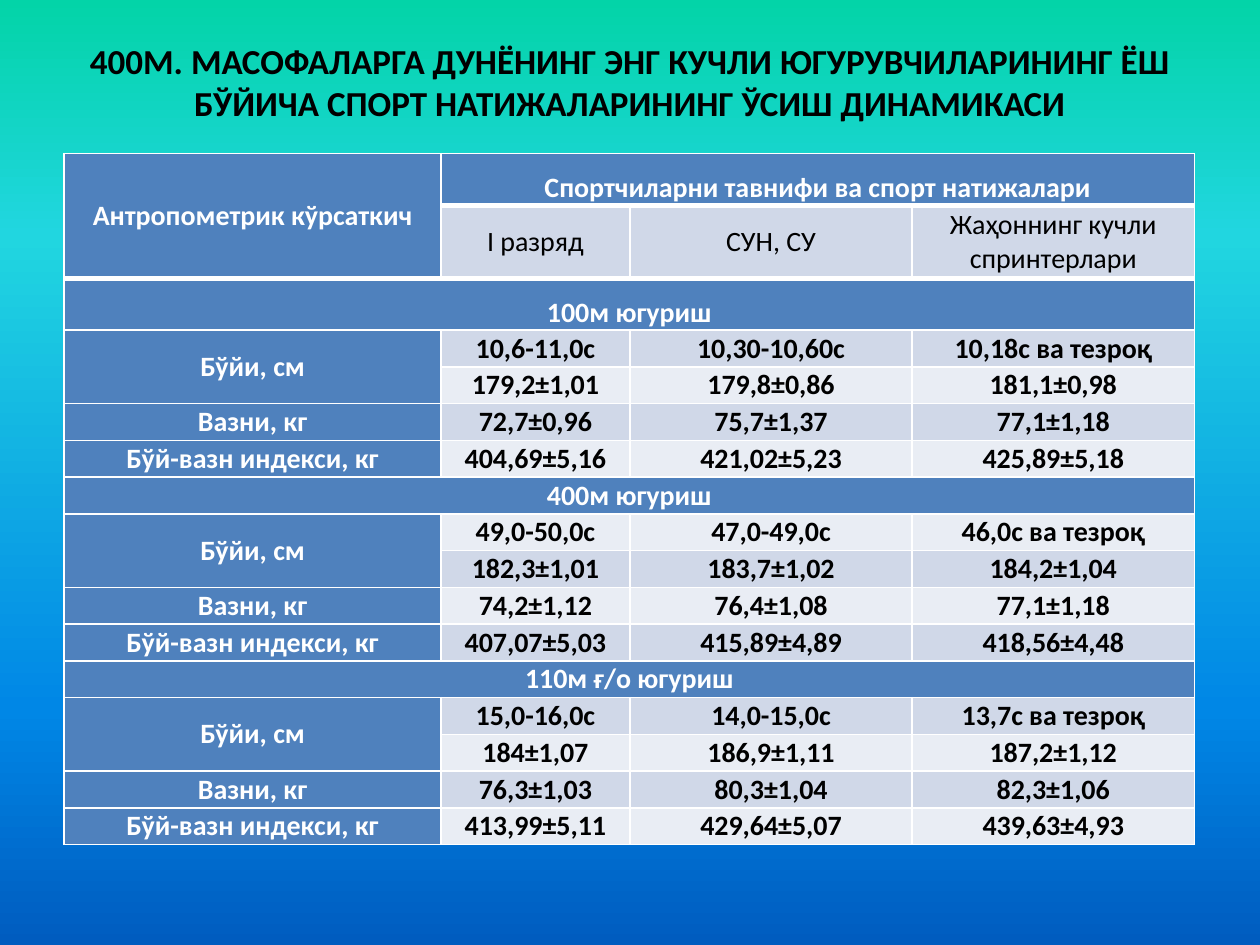
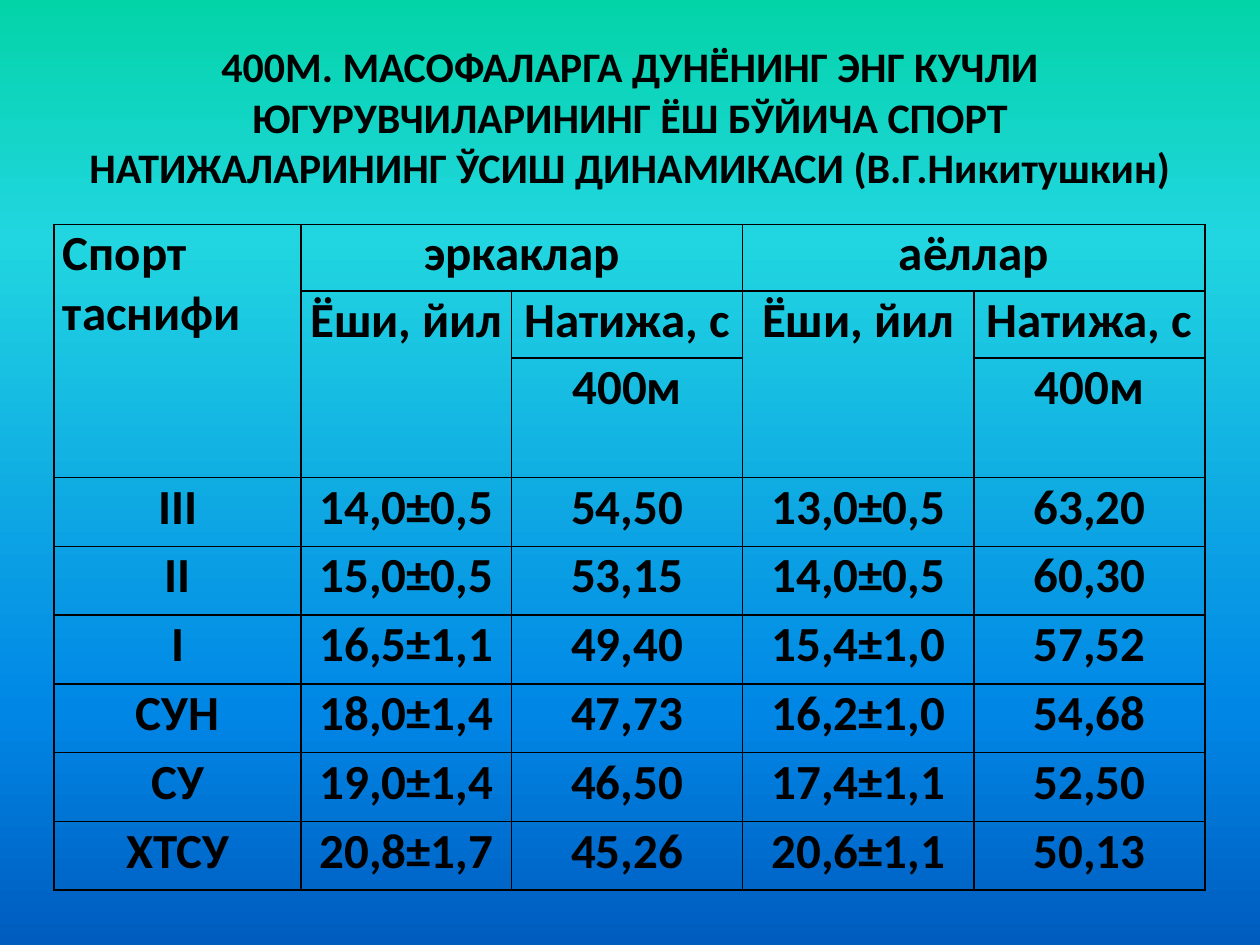
from lxml import etree
from pptx import Presentation
from pptx.dml.color import RGBColor
from pptx.enum.text import MSO_ANCHOR, MSO_AUTO_SIZE, PP_ALIGN
from pptx.oxml.ns import qn
from pptx.util import Emu, Inches, Pt

LEFT, CENTER = PP_ALIGN.LEFT, PP_ALIGN.CENTER
TOP, MIDDLE = MSO_ANCHOR.TOP, MSO_ANCHOR.MIDDLE
NO_FIT = MSO_AUTO_SIZE.NONE

FONT = "Calibri"
BLACK, WHITE = "000000", "FFFFFF"
BLUE, PALE, LIGHT = "4F81BD", "D0D8E8", "E9EDF4"
SKY = [(0, "03D4A8"), (25, "21D6E0"), (75, "0087E6"), (100, "005CBF")]
COLS, ROWS = 100, 75
SIDES = ("L", "R", "T", "B")

HEAD = ("400М. МАСОФАЛАРГА ДУНЁНИНГ ЭНГ КУЧЛИ ЮГУРУВЧИЛАРИНИНГ ЁШ "
        "БЎЙИЧА СПОРТ НАТИЖАЛАРИНИНГ ЎСИШ ДИНАМИКАСИ")

# In the tables "<" joins a cell to its left neighbour, "^" to the one above.
BODY = """
Антропометрик кўрсаткич|Спортчиларни тавнифи ва спорт натижалари|<|<
^|I разряд|СУН, СУ|Жаҳоннинг кучли спринтерлари
100м югуриш|<|<|<
Бўйи, см|10,6-11,0с|10,30-10,60с|10,18с ва тезроқ
^|179,2±1,01|179,8±0,86|181,1±0,98
Вазни, кг|72,7±0,96|75,7±1,37|77,1±1,18
Бўй-вазн индекси, кг|404,69±5,16|421,02±5,23|425,89±5,18
400м югуриш|<|<|<
Бўйи, см|49,0-50,0с|47,0-49,0с|46,0с ва тезроқ
^|182,3±1,01|183,7±1,02|184,2±1,04
Вазни, кг|74,2±1,12|76,4±1,08|77,1±1,18
Бўй-вазн индекси, кг|407,07±5,03|415,89±4,89|418,56±4,48
110м ғ/о югуриш|<|<|<
Бўйи, см|15,0-16,0с|14,0-15,0с|13,7с ва тезроқ
^|184±1,07|186,9±1,11|187,2±1,12
Вазни, кг|76,3±1,03|80,3±1,04|82,3±1,06
Бўй-вазн индекси, кг|413,99±5,11|429,64±5,07|439,63±4,93
"""

AGES = """
Спорт таснифи|эркаклар|<|аёллар|<
^|Ёши, йил|Натижа, с|Ёши, йил|Натижа, с
^|^|400м|^|400м
III|14,0±0,5|54,50|13,0±0,5|63,20
II|15,0±0,5|53,15|14,0±0,5|60,30
I|16,5±1,1|49,40|15,4±1,0|57,52
СУН|18,0±1,4|47,73|16,2±1,0|54,68
СУ|19,0±1,4|46,50|17,4±1,1|52,50
ХТСУ|20,8±1,7|45,26|20,6±1,1|50,13
"""


def rgb(code):
    return RGBColor.from_string(code)


def write(frame, text, size=16, ink=BLACK, bold=True, align=CENTER, lead=None):
    """Put one formatted paragraph in a text frame."""
    frame.word_wrap = True
    para = frame.paragraphs[0]
    para.alignment = align
    if lead:
        para.line_spacing = lead
    run = para.add_run()
    run.text = text
    font = run.font
    font.name, font.size, font.bold = FONT, Pt(size), bold
    font.color.rgb = rgb(ink)


def edge(cell, side, ink, width):
    """Draw one border of a cell; call before the cell gets its fill."""
    props = cell._tc.get_or_add_tcPr()
    line = etree.SubElement(props, qn("a:ln" + side), w=str(Pt(width)))
    fill = etree.SubElement(line, qn("a:solidFill"))
    etree.SubElement(fill, qn("a:srgbClr"), val=ink)


class Deck:
    def __init__(self):
        self.prs = Presentation()
        self.prs.slide_width, self.prs.slide_height = Inches(10), Inches(7.5)
        self.slide = None
        self.paint()

    def paint(self):
        """Give the master its gradient, running from top to bottom."""
        master = self.prs.slide_master
        fill = master.background.fill
        fill.gradient()
        fill.gradient_angle = 270
        stops = next(master.element.iter(qn("a:gsLst")))
        stops.clear()
        for share, code in SKY:
            stop = etree.SubElement(stops, qn("a:gs"), pos=str(share * 1000))
            etree.SubElement(stop, qn("a:srgbClr"), val=code)

    def x(self, cols):
        return Emu(round(self.prs.slide_width * cols / COLS))

    def y(self, rows):
        return Emu(round(self.prs.slide_height * rows / ROWS))

    def page(self, text, high, size):
        """Start a slide and set its title."""
        self.slide = self.prs.slides.add_slide(self.prs.slide_layouts[5])
        title = self.slide.shapes.title
        title.left, title.top = self.x(5), self.y(3)
        title.width, title.height = self.x(90), self.y(high)
        frame = title.text_frame
        frame.auto_size, frame.vertical_anchor = NO_FIT, MIDDLE
        write(frame, text, size=size)

    def table(self, data, left, top, wide, tall, look, pad, anchor, line):
        """Add a table; look(row, col, cells) gives fill, edges and format."""
        grid = [row.split("|") for row in data.strip().splitlines()]
        frame = self.slide.shapes.add_table(
            len(grid), len(wide), self.x(left), self.y(top),
            self.x(sum(wide)), self.y(sum(tall)))
        table = frame.table
        table.first_row = table.horz_banding = False
        for col, size in zip(table.columns, wide):
            col.width = self.x(size)
        for row, size in zip(table.rows, tall):
            row.height = self.y(size)
        for r, cells in enumerate(grid):
            for c, text in enumerate(cells):
                cell = table.cell(r, c)
                fill, edges, style = look(r, c, cells)
                for side in SIDES:
                    edge(cell, side, line, edges.get(side, 1))
                if fill:
                    cell.fill.solid()
                    cell.fill.fore_color.rgb = rgb(fill)
                else:
                    cell.fill.background()
                cell.margin_left = cell.margin_right = self.x(pad)
                cell.margin_top = cell.margin_bottom = 0
                cell.vertical_anchor = anchor
                if text not in "<^":
                    write(cell.text_frame, text, **style)
                    self.join(table, grid, r, c)

    def join(self, table, grid, r, c):
        """Merge a cell with the marked cells to its right and below."""
        right, low = c, r
        while right + 1 < len(grid[r]) and grid[r][right + 1] == "<":
            right += 1
        while low + 1 < len(grid) and grid[low + 1][c] == "^":
            low += 1
        if (low, right) != (r, c):
            table.cell(r, c).merge(table.cell(low, right))


def band(r, c, cells):
    """Blue heads and labels, striped values, thick lines under the head."""
    head = c == 0 or "<" in cells
    fill = BLUE if head else PALE if r % 2 else LIGHT
    edges = {"T": 3 if r in (1, 2) else 1, "B": 3 if r in (0, 1) else 1}
    tall = r in (0, 2) and "<" in cells[c + 1:]
    lead = 1.5 if tall and (r, c) != (0, 0) else None
    style = dict(ink=WHITE if head else BLACK, bold=head or r != 1, lead=lead)
    return fill, edges, style


def plain(r, c, cells):
    """Clear cells, all centred but the corner."""
    return None, {}, dict(size=28, align=CENTER if r or c else LEFT)


def main():
    deck = Deck()
    deck.page(HEAD, high=6.9, size=20)
    deck.table(BODY, 5.1, 12.2, [29.9, 15, 22.4, 22.4],
               [4.1, 5.8, 4.1] + [2.92] * 14, band, 0.5, MIDDLE, WHITE)
    deck.page(HEAD + " (В.Г.Никитушкин)", high=12.5, size=24)
    deck.table(AGES, 4.3, 17.8, [19.6, 16.7] + [18.35] * 3,
               [5.3, 5.3, 9.5] + [5.46] * 6, plain, 0.7, TOP, BLACK)
    deck.prs.save("out.pptx")


if __name__ == "__main__":
    main()
